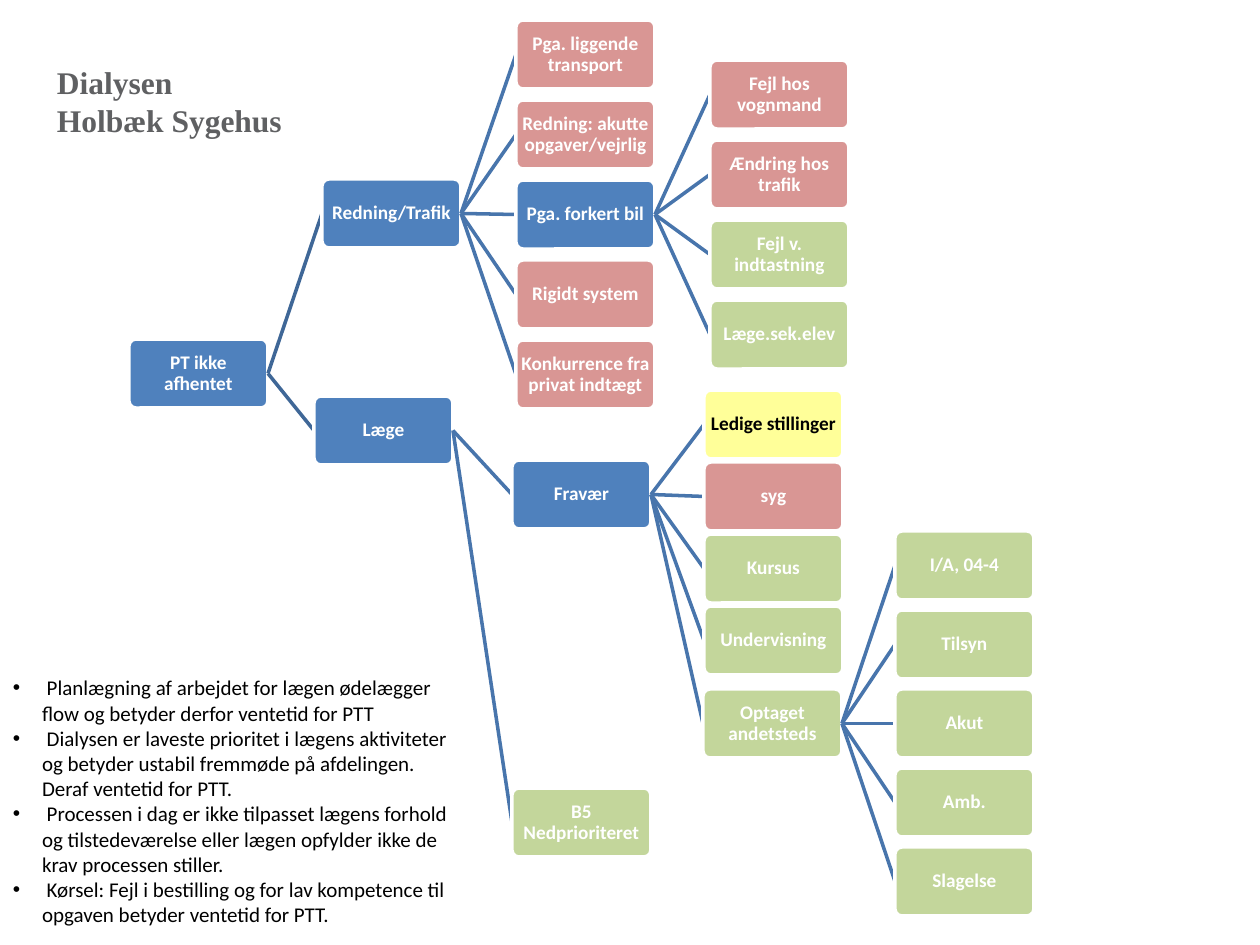
"""Build a cause tree for patients not being collected from dialysis."""
from lxml import etree
from pptx import Presentation
from pptx.dml.color import RGBColor
from pptx.enum.shapes import MSO_CONNECTOR, MSO_SHAPE
from pptx.enum.text import MSO_ANCHOR, MSO_AUTO_SIZE, PP_ALIGN
from pptx.oxml.ns import qn
from pptx.util import Pt

ROUND = MSO_SHAPE.ROUNDED_RECTANGLE
LINE = MSO_CONNECTOR.STRAIGHT
TOP, MIDDLE = MSO_ANCHOR.TOP, MSO_ANCHOR.MIDDLE
LEFT, CENTER = PP_ALIGN.LEFT, PP_ALIGN.CENTER
FIXED = MSO_AUTO_SIZE.NONE

BLUE = RGBColor(0x4F, 0x81, 0xBD)
RED = RGBColor(0xD9, 0x96, 0x94)
GREEN = RGBColor(0xC3, 0xD6, 0x9B)
YELLOW = RGBColor(0xFF, 0xFF, 0x99)
WHITE = RGBColor(0xFF, 0xFF, 0xFF)
BLACK = RGBColor(0x00, 0x00, 0x00)
GRAY = RGBColor(0x5F, 0x60, 0x62)
DARK = RGBColor(0x3F, 0x67, 0x97)
STEEL = RGBColor(0x48, 0x75, 0xAC)

WIDE, HIGH = 139, 69
ROOT = "PT ikke afhentet"


def px(n):
    return round(n * 914400 / 126)


def write(frame, text, size=11, font="Calibri", color=WHITE, bold=True,
          align=CENTER, anchor=MIDDLE, pad=(3, 3), space=0.9, hang=0):
    frame.word_wrap = True
    frame.auto_size = FIXED
    frame.vertical_anchor = anchor
    frame.margin_left = frame.margin_right = px(pad[0])
    frame.margin_top = frame.margin_bottom = px(pad[1])
    frame.text = text
    for para in frame.paragraphs:
        if hang:
            props = para._p.get_or_add_pPr()
            props.set("marL", str(px(hang)))
            props.set("indent", str(-px(hang)))
        para.alignment = align
        para.line_spacing = space
        para.space_before = Pt(0)
        para.font.size = Pt(size)
        para.font.name = font
        para.font.bold = bold
        para.font.color.rgb = color


deck = Presentation()
deck.slide_width, deck.slide_height = px(1260), px(945)
slide = deck.slides.add_slide(deck.slide_layouts[1])
shapes = slide.shapes

title, body = slide.placeholders
title.left, title.top, title.width, title.height = map(px, (44, 57, 352, 89))
write(title.text_frame, "Dialysen\nHolbæk Sygehus", size=18,
      font="Times New Roman", color=GRAY, align=LEFT, anchor=TOP,
      pad=(13, 6), space=1.0)

notes = [
    " Planlægning af arbejdet for lægen ødelægger flow og betyder derfor ventetid for PTT",
    " Dialysen er laveste prioritet i lægens aktiviteter og betyder ustabil fremmøde på afdelingen. Deraf ventetid for PTT.",
    " Processen i dag er ikke tilpasset lægens forhold og tilstedeværelse eller lægen opfylder ikke de krav processen stiller.",
    " Kørsel: Fejl i bestilling og for lav kompetence til opgaven betyder ventetid for PTT.",
]
body.left, body.top, body.width, body.height = map(px, (0, 669, 472, 267))
write(body.text_frame, "\n".join(notes), size=12, color=BLACK, bold=False,
      align=LEFT, anchor=TOP, pad=(13, 6), space=1.0, hang=29)

groups = [
    (None, 129, 339, 0, [(ROOT, BLUE)]),
    (ROOT, 322, 179, 0, [("Redning/Trafik", BLUE)]),
    ("Redning/Trafik", 516, 20, 80, [
        ("Pga. liggende transport", RED),
        ("Redning: akutte opgaver/vejrlig", RED),
        ("Pga. forkert bil", BLUE),
        ("Rigidt system", RED),
        ("Konkurrence fra privat indtægt", RED)]),
    ("Pga. forkert bil", 710, 60, 80, [
        ("Fejl hos vognmand", RED),
        ("Ændring hos trafik", RED),
        ("Fejl v. indtastning", GREEN),
        ("Læge.sek.elev", GREEN)]),
    (ROOT, 314, 396, 0, [("Læge", BLUE)]),
    ("Læge", 512, 788, 0, [("B5 Nedprioriteret", GREEN)]),
    ("Læge", 512, 460, 0, [("Fravær", BLUE)]),
    ("Fravær", 704, 390, 72, [
        ("Ledige stillinger", YELLOW),
        ("syg", RED),
        ("Kursus", GREEN),
        ("Undervisning", GREEN)]),
    ("Fravær", 703, 689, 0, [("Optaget andetsteds", GREEN)]),
    ("Optaget andetsteds", 895, 531, 79, [
        ("I/A, 04-4", GREEN),
        ("Tilsyn", GREEN),
        ("Akut", GREEN),
        ("Amb.", GREEN),
        ("Slagelse", GREEN)]),
]

spots = {}
for parent, x, first, step, nodes in groups:
    for i, (text, fill) in enumerate(nodes):
        y = first + i * step
        spots[text] = x, y
        if parent:
            px0, py0 = spots[parent]
            link = shapes.add_connector(
                LINE, px(px0 + WIDE), px(py0 + HIGH / 2), px(x), px(y + HIGH / 2))
            link.line.color.rgb = DARK if parent == ROOT else STEEL
            link.line.width = Pt(2)
            etree.SubElement(link._element.spPr, qn("a:effectLst"))
        box = shapes.add_shape(ROUND, px(x), px(y), px(WIDE), px(HIGH))
        box.adjustments[0] = 0.1
        box.shadow.inherit = False
        box.fill.solid()
        box.fill.fore_color.rgb = fill
        box.line.color.rgb = WHITE
        box.line.width = Pt(2)
        write(box.text_frame, text, color=BLACK if fill == YELLOW else WHITE)

deck.save("out.pptx")
